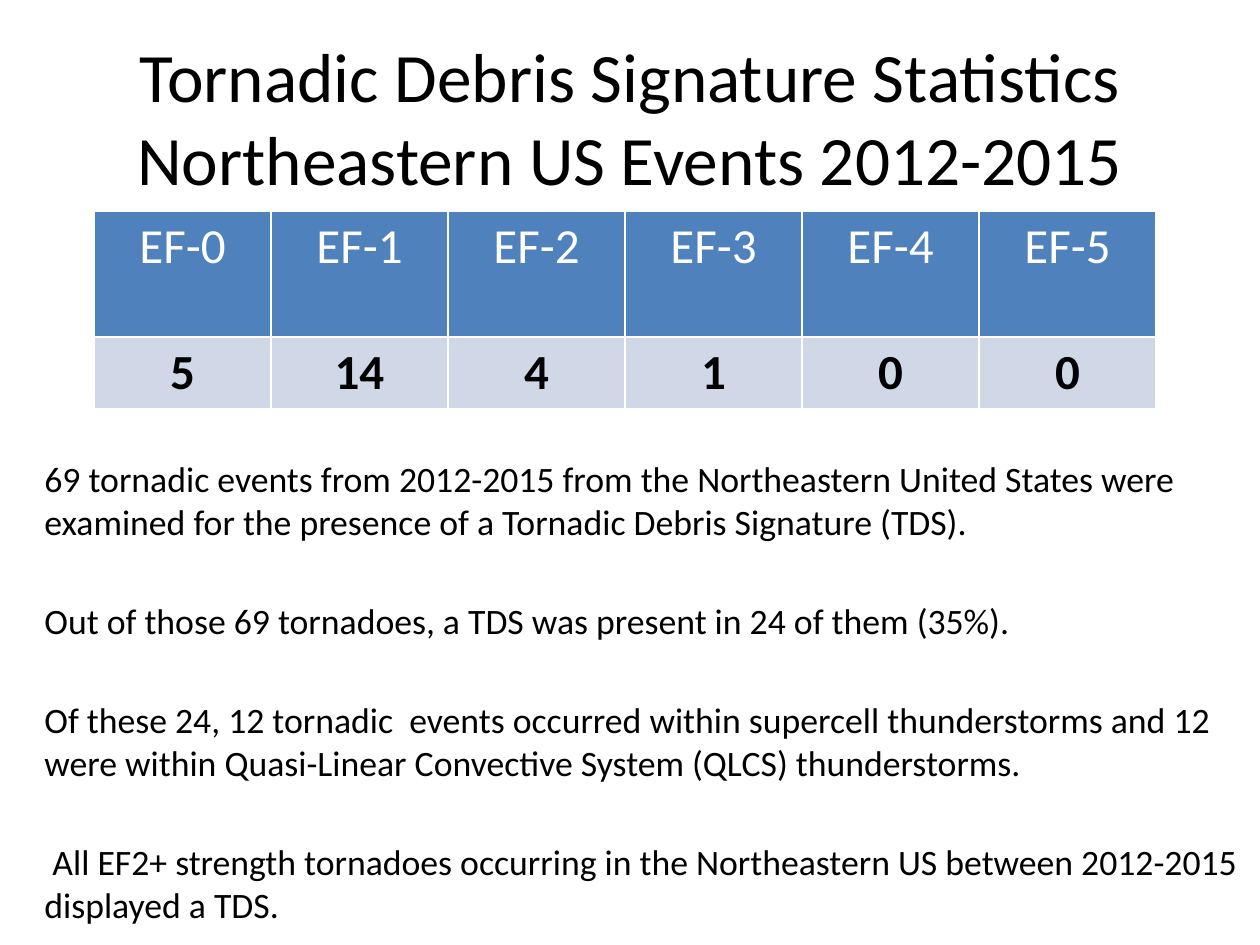
from lxml import etree
from pptx import Presentation
from pptx import util as u
from pptx.dml.color import RGBColor
from pptx.enum import text
from pptx.oxml.ns import qn

EMU_PER_PX = 914400 / 126


def px(length):
    return u.Emu(round(length * EMU_PER_PX))


def color(hex_string):
    return RGBColor.from_string(hex_string)


class SlideBuilder:
    font = "Calibri"
    ink = "000000"
    paper = "FFFFFF"

    def __init__(self, presentation):
        self.slide = presentation.slides.add_slide(presentation.slide_layouts[6])

    def style(self, paragraph, size, ink, bold=False):
        for run in paragraph.runs:
            run.font.name = self.font
            run.font.size = u.Pt(size)
            run.font.bold = bold
            run.font.color.rgb = color(ink)

    def text_box(self, left, top, width, height, paragraphs, size,
                 align=text.PP_ALIGN.LEFT, anchor=text.MSO_ANCHOR.TOP,
                 first_gap=0, gap=0):
        """Add paragraphs, with the space in points before the first and the others."""
        box = self.slide.shapes.add_textbox(px(left), px(top), px(width), px(height))
        frame = box.text_frame
        frame.word_wrap = True
        frame.vertical_anchor = anchor
        for i, words in enumerate(paragraphs):
            paragraph = frame.add_paragraph() if i else frame.paragraphs[0]
            paragraph.text = words
            paragraph.alignment = align
            paragraph.space_before = u.Pt(gap if i else first_gap)
            self.style(paragraph, size, self.ink)

    def borders(self, cell, points):
        properties = cell._tc.get_or_add_tcPr()
        for side in ("a:lnL", "a:lnR", "a:lnT", "a:lnB"):
            line = etree.SubElement(properties, qn(side), w=str(u.Pt(points)))
            fill = etree.SubElement(line, qn("a:solidFill"))
            etree.SubElement(fill, qn("a:srgbClr"), val=self.paper)

    def table(self, left, top, column_width, row_heights, rows, row_styles, size):
        """Add a centred table; each row style is (fill, ink, bold)."""
        columns = len(rows[0])
        grid = self.slide.shapes.add_table(
            len(rows), columns, px(left), px(top),
            px(column_width * columns), px(sum(row_heights))).table
        for column in grid.columns:
            column.width = px(column_width)
        for r, (values, (fill, ink, bold)) in enumerate(zip(rows, row_styles)):
            grid.rows[r].height = px(row_heights[r])
            for c, value in enumerate(values):
                cell = grid.cell(r, c)
                self.borders(cell, 1)
                cell.fill.solid()
                cell.fill.fore_color.rgb = color(fill)
                cell.text_frame.text = value
                paragraph = cell.text_frame.paragraphs[0]
                paragraph.alignment = text.PP_ALIGN.CENTER
                self.style(paragraph, size, ink, bold)


FINDINGS = [
    "69 tornadic events from 2012-2015 from the Northeastern United States were "
    "examined for the presence of a Tornadic Debris Signature (TDS).",
    "Out of those 69 tornadoes, a TDS was present in 24 of them (35%).",
    "Of these 24, 12 tornadic  events occurred within supercell thunderstorms and 12 "
    "were within Quasi-Linear Convective System (QLCS) thunderstorms.",
    " All EF2+ strength tornadoes occurring in the Northeastern US between "
    "2012-2015 displayed a TDS.",
]
EVENTS_BY_RATING = [5, 14, 4, 1, 0, 0]


def main():
    presentation = Presentation()
    presentation.slide_width = px(1260)
    presentation.slide_height = px(945)
    builder = SlideBuilder(presentation)

    builder.text_box(
        63, 38, 1134, 157,
        ["Tornadic Debris Signature Statistics\vNortheastern US Events 2012-2015"],
        39.6, align=text.PP_ALIGN.CENTER, anchor=text.MSO_ANCHOR.MIDDLE)
    builder.text_box(32, 451, 1218, 441, FINDINGS, 20.4, first_gap=4, gap=32)
    ratings = [f"EF-{rating}" for rating in range(len(EVENTS_BY_RATING))]
    builder.table(
        94, 211, 177, [126, 72],
        [ratings, [str(count) for count in EVENTS_BY_RATING]],
        [("4F81BD", builder.paper, False), ("D0D8E8", builder.ink, True)], 28)

    presentation.save("out.pptx")


if __name__ == "__main__":
    main()
